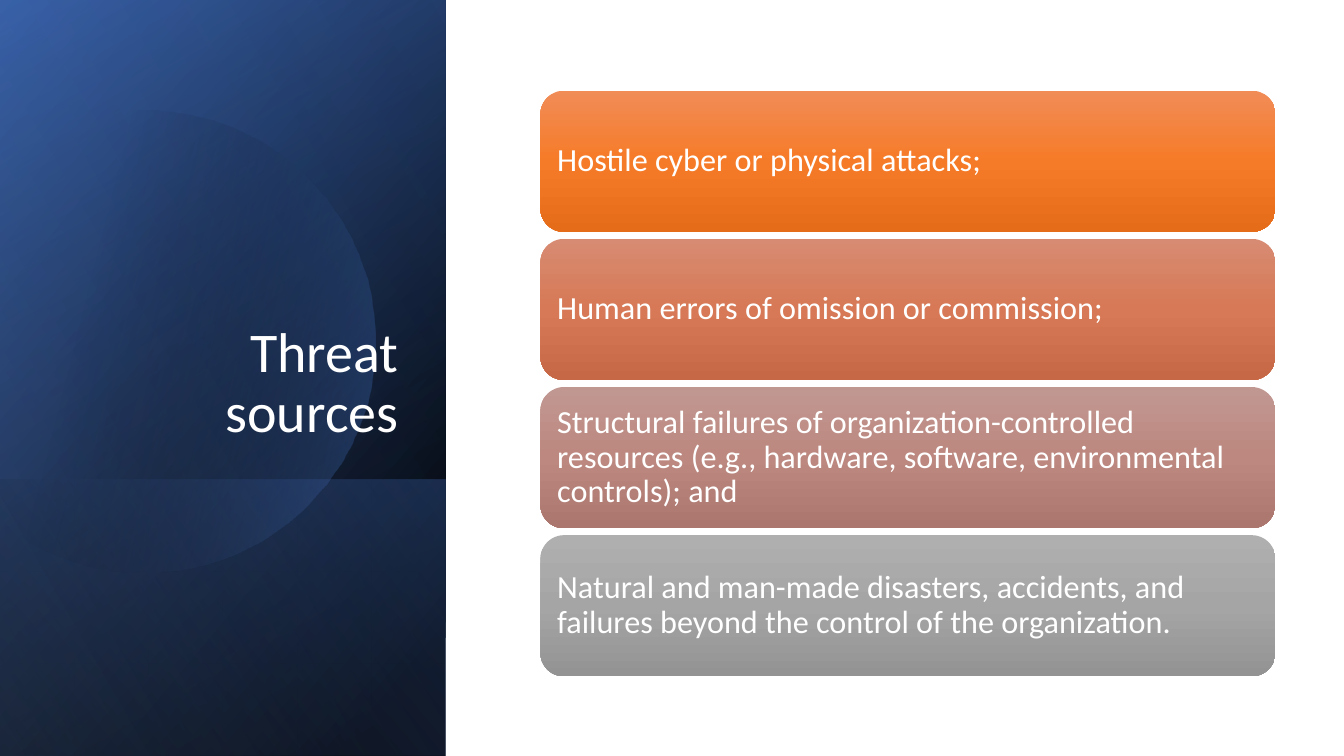
import math

from lxml import etree
from pptx import Presentation
from pptx import util as u
from pptx.dml.color import RGBColor
from pptx.enum import shapes, text
from pptx.oxml.ns import qn

PX = 9144  # 100 px to the inch
FONT = "Calibri"
COLORS = {
    "white": "FFFFFF", "black": "000000", "navy": "2F5597",
    "blue": "4472C4", "sky": "8FAADC",
}


class Deck:
    def __init__(self, width, height):
        self.prs = Presentation()
        self.prs.slide_width = width * PX
        self.prs.slide_height = height * PX
        self.s = self.prs.slides.add_slide(self.prs.slide_layouts[6])

    def gradient(self, sp, stops, angle):
        """Fill with (position %, colour, opacity %) stops and remove the line."""
        sp.shadow.inherit = False
        sp.line.fill.background()
        sp.fill.background()
        no_fill = sp._element.spPr.find(qn("a:noFill"))
        grad = etree.Element(qn("a:gradFill"), rotWithShape="1")
        stop_list = etree.SubElement(grad, qn("a:gsLst"))
        for pos, color, opacity in stops:
            gs = etree.SubElement(stop_list, qn("a:gs"), pos=str(pos * 1000))
            clr = etree.SubElement(gs, qn("a:srgbClr"), val=COLORS.get(color, color))
            if opacity < 100:
                etree.SubElement(clr, qn("a:alpha"), val=str(opacity * 1000))
        etree.SubElement(grad, qn("a:lin"), ang=str(angle * 60000), scaled="0")
        no_fill.getparent().replace(no_fill, grad)

    def box(self, kind, at, stops, angle):
        sp = self.s.shapes.add_shape(kind, *(v * PX for v in at))
        self.gradient(sp, stops, angle)
        return sp

    def band(self, at, stops, angle):
        sp = self.box(shapes.MSO_SHAPE.RECTANGLE, at, stops, angle)
        sp.rotation = 90
        sp._element.spPr.find(qn("a:xfrm")).set("flipH", "1")

    def cut_circle(self, cx, cy, radius, left, stops, angle):
        """Circle cut off by a vertical edge at x = left."""
        end = math.acos((left - cx) / radius)
        turns = [end * (i / 60 - 1) for i in range(121)]
        points = [(cx + radius * math.cos(t), cy + radius * math.sin(t)) for t in turns]
        builder = self.s.shapes.build_freeform(*points[0], scale=PX)
        builder.add_line_segments(points[1:], close=True)
        self.gradient(builder.convert_to_shape(), stops, angle)

    def set_text(self, sp, words, size, align, anchor):
        tf = sp.text_frame
        tf.word_wrap = True
        tf.vertical_anchor = anchor
        tf.text = words
        p = tf.paragraphs[0]
        p.alignment = align
        p.line_spacing = 0.9
        font = p.runs[0].font
        font.name = FONT
        font.size = u.Pt(size)
        font.color.rgb = RGBColor.from_string(COLORS["white"])
        return tf

    def title(self, at, words):
        sp = self.s.shapes.add_textbox(*(v * PX for v in at))
        self.set_text(sp, words, 40, text.PP_ALIGN.RIGHT, text.MSO_ANCHOR.BOTTOM)

    def card(self, at, words, tones):
        stops = [(pos, tone, 100) for pos, tone in zip((0, 50, 100), tones)]
        sp = self.box(shapes.MSO_SHAPE.ROUNDED_RECTANGLE, at, stops, 90)
        tf = self.set_text(sp, words, 23, text.PP_ALIGN.LEFT, text.MSO_ANCHOR.MIDDLE)
        tf.margin_left = tf.margin_right = tf.margin_top = tf.margin_bottom = 10 * PX


CARDS = [
    ("Hostile cyber or physical attacks;", ("F18C57", "F67B28", "E56C19")),
    ("Human errors of omission or commission;", ("D78B72", "D77956", "C66846")),
    ("Structural failures of organization-controlled resources "
     "(e.g., hardware, software, environmental controls); and",
     ("C19791", "BC8880", "AA766E")),
    ("Natural and man-made disasters, accidents, and failures "
     "beyond the control of the organization.", ("AFAFAF", "A5A5A5", "939393")),
]


def main():
    deck = Deck(1333, 750)

    # Left panel: layered gradients
    panel = (-154, 154, 750, 442)
    deck.band(panel, [(8, "black", 100), (100, "navy", 100)], 50)
    deck.band(panel, [(0, "black", 0), (99, "blue", 46)], 30)
    deck.band((84, 392, 274, 442), [(2, "blue", 29), (100, "black", 30)], 130)
    deck.cut_circle(143, 339, 229, -15, [(29, "black", 0), (100, "blue", 43)], 14)
    deck.band(panel, [(0, "black", 0), (99, "sky", 11)], 120)

    # Title
    deck.title((64, 184, 341, 262), "Threat sources")

    # Threat cards
    for i, (words, tones) in enumerate(CARDS):
        deck.card((536, 90 + 147 * i, 729, 140), words, tones)

    deck.prs.save("out.pptx")


if __name__ == "__main__":
    main()
